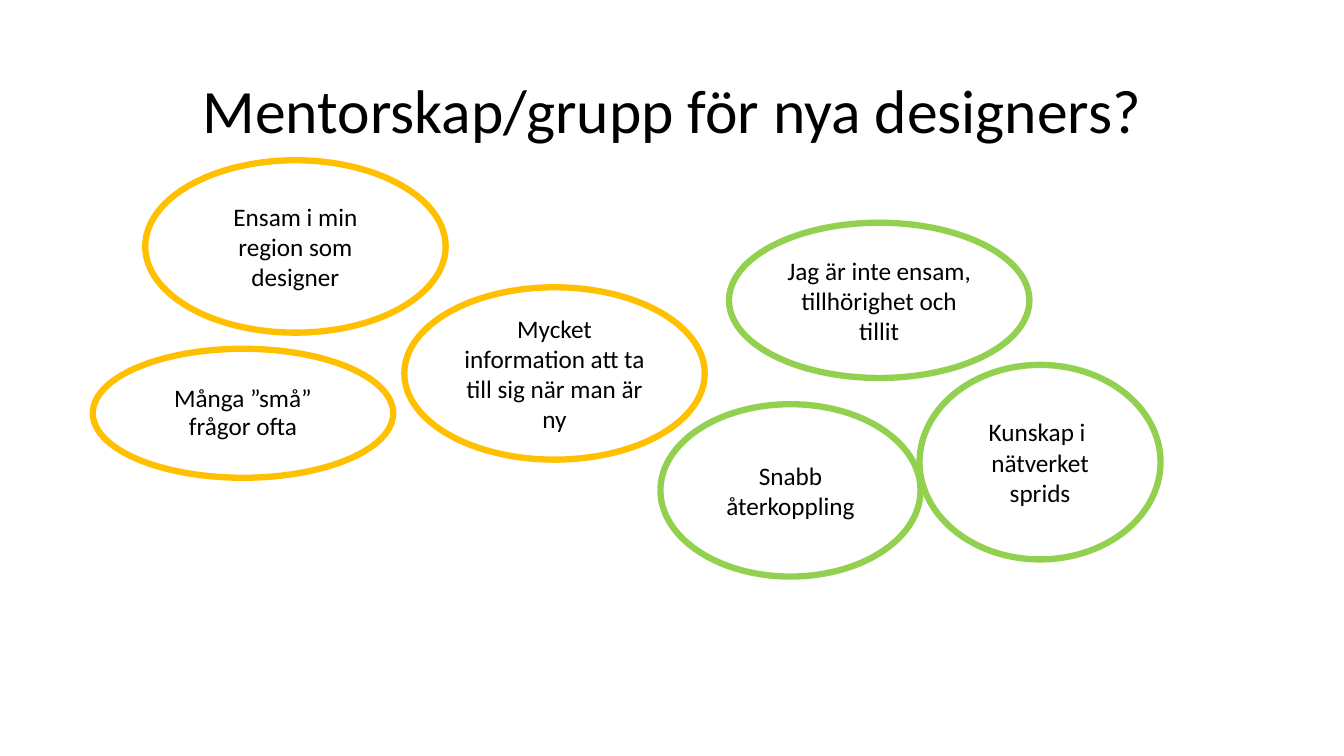
from pptx import Presentation
from pptx.dml.color import RGBColor
from pptx.enum.shapes import MSO_SHAPE
from pptx.enum.text import MSO_ANCHOR, PP_ALIGN
from pptx.util import Inches, Pt

OVAL = MSO_SHAPE.OVAL
MIDDLE = MSO_ANCHOR.MIDDLE
CENTER = PP_ALIGN.CENTER

COLORS = {"text": "000000", "fill": "FFFFFF", "problem": "FFC000", "benefit": "92D050"}

PROBLEMS = [
    ((1.44, 1.59, 2.98, 1.71), ["Ensam i min region som designer"], 1.0),
    ((4.01, 2.85, 2.98, 1.71), ["Mycket information att ta till sig när man är ny"], 1.0),
    ((0.92, 3.46, 2.98, 1.28), ["Många ”små” frågor ofta"], 0.9),
]
BENEFITS = [
    ((6.55, 4.01, 2.58, 1.71), ["Snabb återkoppling"], 1.0),
    ((7.23, 2.21, 2.98, 1.54), ["Jag är inte ensam, tillhörighet och tillit"], 1.0),
    ((9.12, 3.62, 2.39, 1.93), ["Kunskap i ", "nätverket sprids"], 1.0),
]


def rgb(name):
    return RGBColor.from_string(COLORS[name])


def write(tf, lines, size=18, color="text", spacing=1.0):
    tf.word_wrap = True
    tf.vertical_anchor = MIDDLE
    for i, line in enumerate(lines):
        p = tf.paragraphs[0] if i == 0 else tf.add_paragraph()
        p.alignment = CENTER
        p.line_spacing = spacing
        r = p.add_run()
        r.text = line
        r.font.name = "Calibri"
        r.font.size = Pt(size)
        r.font.color.rgb = rgb(color)


def add_title(s, box, text):
    tb = s.shapes.add_textbox(*map(Inches, box))
    write(tb.text_frame, [text], size=44, spacing=0.9)


def add_bubble(s, box, lines, outline, spacing):
    sp = s.shapes.add_shape(OVAL, *map(Inches, box))
    sp.shadow.inherit = False
    sp.fill.solid()
    sp.fill.fore_color.rgb = rgb("fill")
    sp.line.color.rgb = rgb(outline)
    sp.line.width = Pt(4.5)
    write(sp.text_frame, lines, spacing=spacing)


def main():
    prs = Presentation()
    prs.slide_width = Inches(13.33)
    prs.slide_height = Inches(7.5)
    s = prs.slides.add_slide(prs.slide_layouts[6])
    add_title(s, (0.92, 0.4, 11.5, 1.45), "Mentorskap/grupp för nya designers?")
    for outline, bubbles in (("problem", PROBLEMS), ("benefit", BENEFITS)):
        for box, lines, spacing in bubbles:
            add_bubble(s, box, lines, outline, spacing)
    prs.save("out.pptx")


if __name__ == "__main__":
    main()
